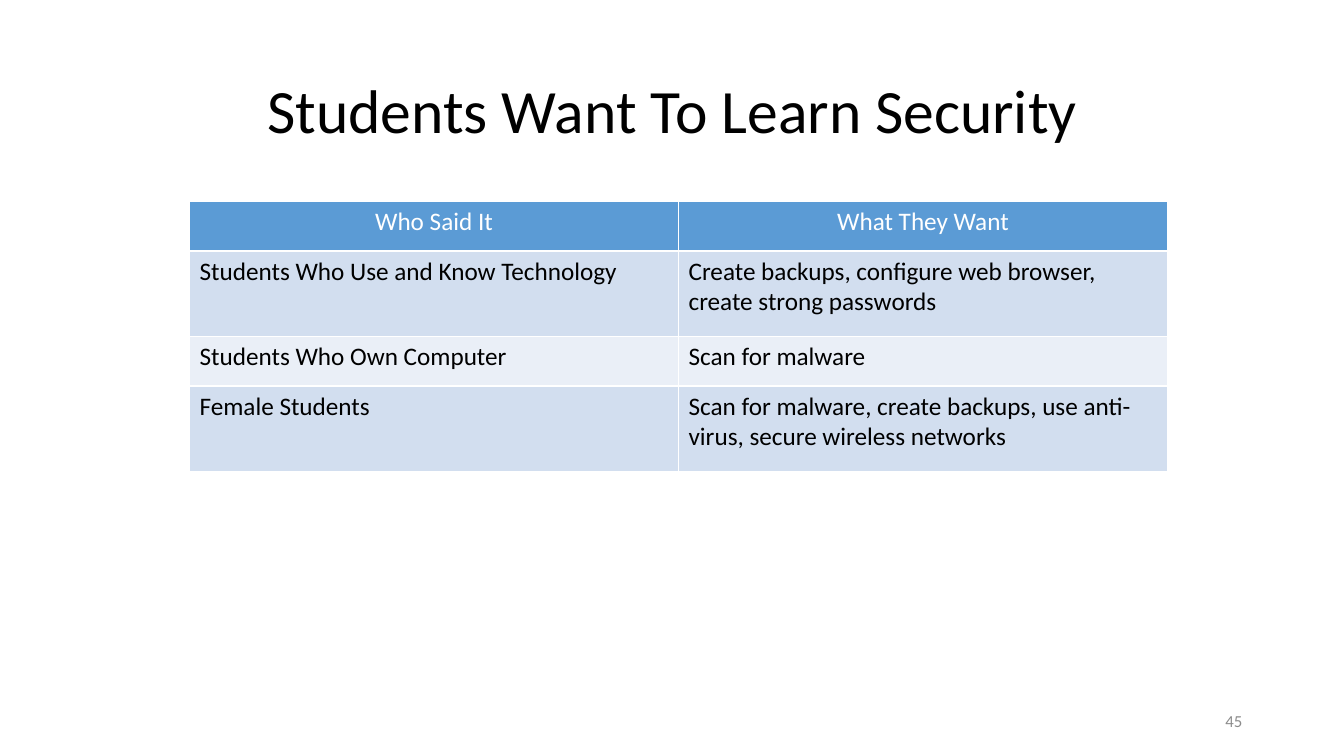
from dataclasses import dataclass

from lxml.etree import SubElement
from pptx import Presentation
from pptx.dml.color import RGBColor
from pptx.enum.text import MSO_ANCHOR as Anchor, PP_ALIGN as Align
from pptx.oxml.ns import qn
from pptx.util import Inches, Pt

FONT = "Calibri"
BLACK = RGBColor(0x00, 0x00, 0x00)
WHITE = RGBColor(0xFF, 0xFF, 0xFF)
GRAY = RGBColor(0x8C, 0x8C, 0x8C)
BLUE = RGBColor(0x5B, 0x9B, 0xD5)
BAND_DARK = RGBColor(0xD2, 0xDE, 0xEF)
BAND_LIGHT = RGBColor(0xEA, 0xEF, 0xF7)


@dataclass(frozen=True)
class Row:
    who: str
    wants: str
    height: float


HEADER = Row("Who Said It", "What They Want", 0.49)
ANSWERS = [
    Row("Students Who Use and Know Technology",
        "Create backups, configure web browser, create strong passwords", 0.85),
    Row("Students Who Own Computer", "Scan for malware", 0.49),
    Row("Female Students",
        "Scan for malware, create backups, use anti-virus, secure wireless networks", 0.85),
]


def write(tf, text: str, size: int, color: RGBColor, align: Align) -> None:
    tf.word_wrap = True
    p = tf.paragraphs[0]
    p.text = text
    p.alignment = align
    p.font.name = FONT
    p.font.size = Pt(size)
    p.font.bold = False
    p.font.color.rgb = color


def add_borders(cell, color: RGBColor) -> None:
    tc_pr = cell._tc.get_or_add_tcPr()
    for side in ("lnL", "lnR", "lnT", "lnB"):
        ln = SubElement(tc_pr, qn(f"a:{side}"), w=str(Pt(1)))
        fill = SubElement(ln, qn("a:solidFill"))
        SubElement(fill, qn("a:srgbClr"), val=str(color))


def add_title(slide, text: str) -> None:
    sp = slide.shapes.title
    sp.left, sp.top = Inches(0.92), Inches(0.4)
    sp.width, sp.height = Inches(11.5), Inches(1.45)
    write(sp.text_frame, text, 44, BLACK, Align.CENTER)
    sp.text_frame.vertical_anchor = Anchor.MIDDLE
    sp.text_frame.paragraphs[0].line_spacing = 0.9


def add_answers(slide, rows: list[Row]) -> None:
    height = sum(row.height for row in rows)
    table = slide.shapes.add_table(
        len(rows), 2, Inches(1.88), Inches(2), Inches(9.7), Inches(height)).table
    for i, row in enumerate(rows):
        table.rows[i].height = Inches(row.height)
        if i == 0:
            fill, color, align = BLUE, WHITE, Align.CENTER
        else:
            fill = BAND_DARK if i % 2 else BAND_LIGHT
            color, align = BLACK, Align.LEFT
        for cell, text in zip(table.rows[i].cells, (row.who, row.wants)):
            write(cell.text_frame, text, 18, color, align)
            add_borders(cell, WHITE)
            cell.fill.solid()
            cell.fill.fore_color.rgb = fill


def add_page_number(slide, number: int) -> None:
    sp = slide.shapes.add_textbox(Inches(9.42), Inches(6.95), Inches(3), Inches(0.4))
    write(sp.text_frame, str(number), 12, GRAY, Align.RIGHT)
    sp.text_frame.vertical_anchor = Anchor.MIDDLE


def main() -> None:
    prs = Presentation()
    prs.slide_width, prs.slide_height = Inches(13.33), Inches(7.5)
    slide = prs.slides.add_slide(prs.slide_layouts[5])
    add_title(slide, "Students Want To Learn Security")
    add_answers(slide, [HEADER, *ANSWERS])
    add_page_number(slide, 45)
    prs.save("out.pptx")


if __name__ == "__main__":
    main()
